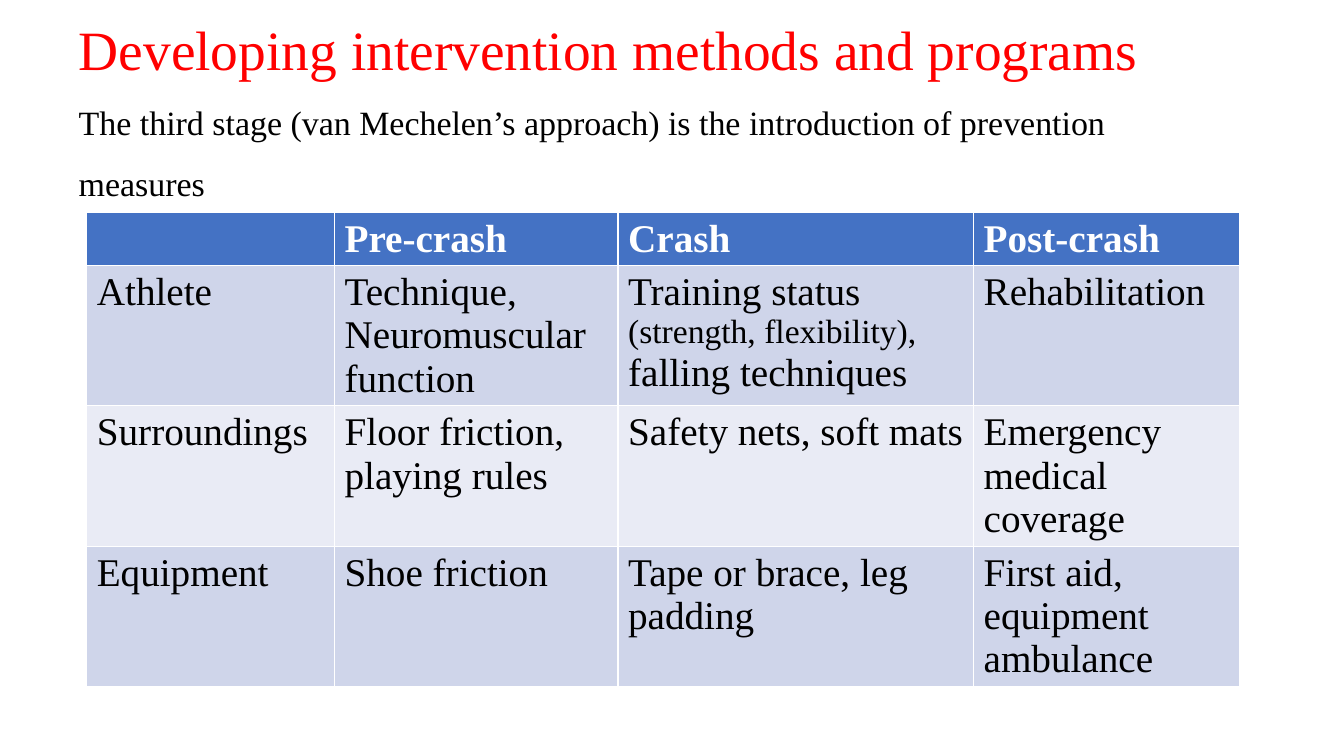
from copy import deepcopy

from pptx import Presentation
from pptx.dml.color import RGBColor
from pptx.enum import text
from pptx.util import Pt

FONT = "Times New Roman"
RED = RGBColor(0xFF, 0x00, 0x00)
BLACK = RGBColor(0x00, 0x00, 0x00)
WHITE = RGBColor(0xFF, 0xFF, 0xFF)
BLUE = RGBColor(0x44, 0x72, 0xC4)
BANDS = [RGBColor(0xE9, 0xEB, 0xF5), RGBColor(0xCF, 0xD5, 0xEA)]

HEADING = "Developing intervention methods and programs"
SUBHEADING = "The third stage (van Mechelen’s approach) is the introduction of prevention measures"
MEASURES = [
    ["", "Pre-crash", "Crash", "Post-crash"],
    ["Athlete", "Technique, Neuromuscular function",
     [("Training status ", 28), ("(strength, flexibility), ", 24), ("falling techniques", 28)],
     "Rehabilitation"],
    ["Surroundings", "Floor friction, playing rules", "Safety nets, soft mats",
     "Emergency medical coverage"],
    ["Equipment", "Shoe friction", "Tape or brace, leg padding",
     "First aid, equipment ambulance"],
]
COLUMN_WIDTHS = [177, 202.5, 254, 190]
ROW_HEIGHTS = [37.5, 100, 100, 100]


def style(run, size, color, bold=False):
    run.font.name = FONT
    run.font.size = Pt(size)
    run.font.color.rgb = color
    run.font.bold = bold


def add_title(slide):
    title = slide.shapes.title
    title.left, title.top, title.width, title.height = Pt(49), Pt(11), Pt(839), Pt(110)
    frame = title.text_frame
    frame.auto_size = text.MSO_AUTO_SIZE.NONE
    frame.word_wrap = True
    frame.vertical_anchor = text.MSO_ANCHOR.MIDDLE
    lines = frame.paragraphs[0]
    lines.text = f"{HEADING}\v{SUBHEADING}"
    lines.alignment = text.PP_ALIGN.LEFT
    lines.line_spacing = 1.5
    heading, subheading = lines.runs
    style(heading, 39.6, RED)
    style(subheading, 24.3, BLACK)
    heading._r.getnext().insert(0, deepcopy(heading._r.rPr))


def add_measures(slide):
    table = slide.shapes.add_table(
        len(MEASURES), len(COLUMN_WIDTHS), Pt(62), Pt(151.5),
        Pt(sum(COLUMN_WIDTHS)), Pt(sum(ROW_HEIGHTS))).table
    for column, width in zip(table.columns, COLUMN_WIDTHS):
        column.width = Pt(width)
    for r, (row, height) in enumerate(zip(MEASURES, ROW_HEIGHTS)):
        table.rows[r].height = Pt(height)
        header = r == 0
        for c, entry in enumerate(row):
            cell = table.cell(r, c)
            cell.fill.solid()
            cell.fill.fore_color.rgb = BLUE if header else BANDS[r % 2]
            parts = [(entry, 28)] if isinstance(entry, str) else entry
            for wording, size in parts:
                run = cell.text_frame.paragraphs[0].add_run()
                run.text = wording
                style(run, size, WHITE if header else BLACK, header)


def main():
    deck = Presentation()
    deck.slide_width, deck.slide_height = Pt(960), Pt(540)
    slide = deck.slides.add_slide(deck.slide_layouts[5])
    add_title(slide)
    add_measures(slide)
    deck.save("out.pptx")


if __name__ == "__main__":
    main()
